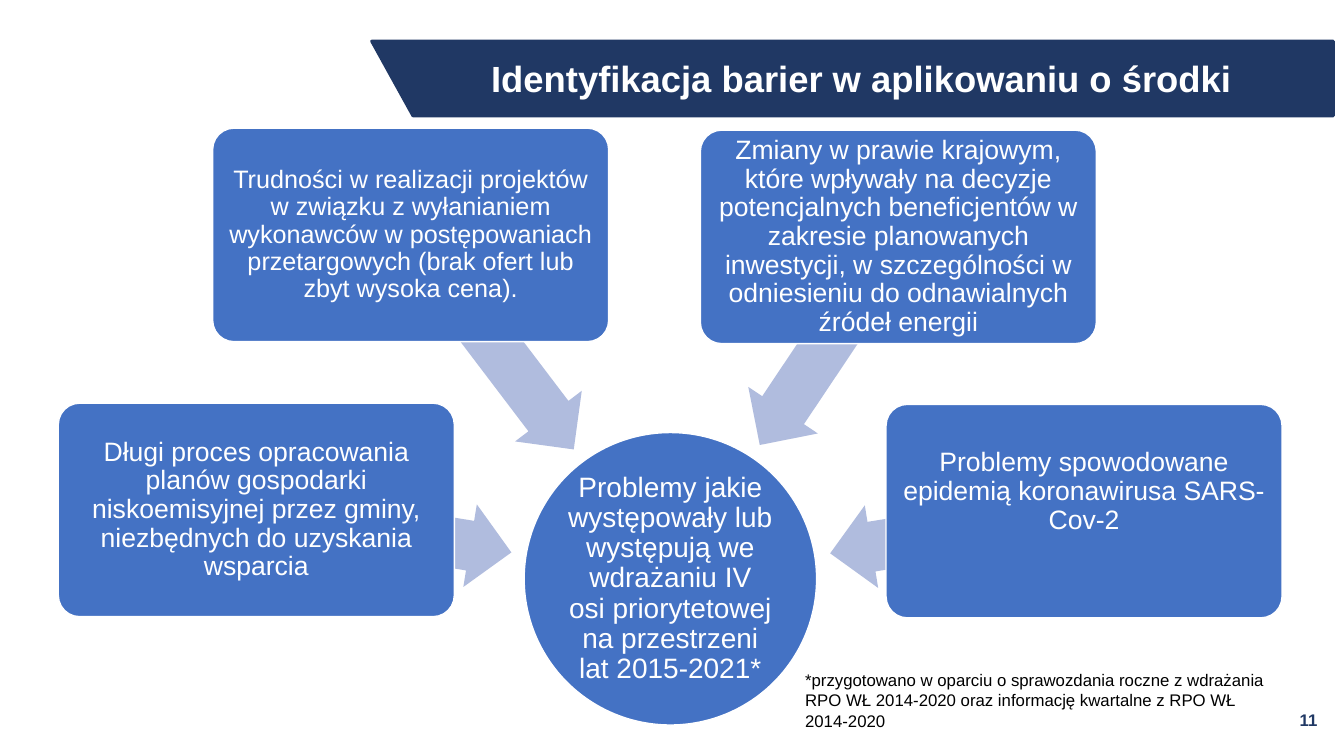
from dataclasses import dataclass

from pptx import Presentation
from pptx.dml.color import RGBColor
from pptx.enum.shapes import MSO_SHAPE
from pptx.enum.text import MSO_ANCHOR, PP_ALIGN
from pptx.util import Cm, Pt

NAVY, BLUE, PALE = "203864", "4472C4", "B0BCDE"
WHITE, BLACK = "FFFFFF", "000000"
BOX_W, BOX_H, ARROW_H = 9.98, 5.38, 2.11


@dataclass
class Arrow:
    left: float
    top: float
    width: float
    turn: float


@dataclass
class Barrier:
    left: float
    top: float
    text: str
    size: int
    arrow: Arrow
    foot: float = 0.11  # bottom inset


BARRIERS = [
    Barrier(1.47, 10.16, "Długi proces opracowania planów gospodarki niskoemisyjnej "
            "przez gminy, niezbędnych do uzyskania wsparcia", 19,
            Arrow(6.43, 12.34, 6.5, 189.3)),
    Barrier(5.36, 3.23, "Trudności w realizacji projektów w związku z wyłanianiem "
            "wykonawców w postępowaniach przetargowych (brak ofert lub zbyt "
            "wysoka cena).", 18, Arrow(9.02, 7.57, 6.78, 232.8)),
    Barrier(17.65, 3.28, "Zmiany w prawie krajowym, które wpływały na decyzje "
            "potencjalnych beneficjentów w zakresie planowanych inwestycji, w "
            "szczególności w odniesieniu do odnawialnych źródeł energii", 19,
            Arrow(17.75, 7.54, 6.3, 303.8)),
    Barrier(22.33, 10.19, "Problemy spowodowane epidemią koronawirusa SARS-Cov-2", 19,
            Arrow(20.88, 12.37, 6.5, 350.8), 1.08),
]


def color(code: str) -> RGBColor:
    return RGBColor.from_string(code)


def paint(shape, fill: str, line: str = "", width: float = 1) -> None:
    shape.shadow.inherit = False
    shape.fill.solid()
    shape.fill.fore_color.rgb = color(fill)
    if line:
        shape.line.color.rgb = color(line)
        shape.line.width = Pt(width)
    else:
        shape.line.fill.background()


def write(shape, text: str, size: int, ink: str, align=PP_ALIGN.CENTER,
          bold: bool = False, space: float = 1.0):
    frame = shape.text_frame
    frame.word_wrap = True
    para = frame.paragraphs[0]
    para.alignment = align
    para.line_spacing = space
    run = para.add_run()
    run.text = text
    run.font.name = "Arial"
    run.font.size = Pt(size)
    run.font.bold = bold
    run.font.color.rgb = color(ink)
    return frame


def draw_node(slide, kind, left: float, top: float, width: float, height: float,
              text: str, size: int, inset: float, foot: float):
    node = slide.shapes.add_shape(kind, Cm(left), Cm(top), Cm(width), Cm(height))
    paint(node, BLUE, WHITE)
    frame = write(node, text, size, WHITE, space=0.9)
    frame.vertical_anchor = MSO_ANCHOR.MIDDLE
    frame.margin_left = frame.margin_right = frame.margin_top = Cm(inset)
    frame.margin_bottom = Cm(foot)
    return node


def draw_arrow(slide, arrow: Arrow) -> None:
    shape = slide.shapes.add_shape(MSO_SHAPE.LEFT_ARROW, Cm(arrow.left), Cm(arrow.top),
                                   Cm(arrow.width), Cm(ARROW_H))
    shape.adjustments[0] = 0.6
    shape.adjustments[1] = 0.5
    shape.rotation = arrow.turn
    paint(shape, PALE)


def add_text(slide, left: float, top: float, width: float, height: float):
    return slide.shapes.add_textbox(Cm(left), Cm(top), Cm(width), Cm(height))


def main() -> None:
    deck = Presentation()
    deck.slide_width, deck.slide_height = Cm(33.87), Cm(19.05)
    slide = deck.slides.add_slide(deck.slide_layouts[6])

    # Title banner and page number
    form = slide.shapes.build_freeform(Cm(9.37), Cm(1.04))
    form.add_line_segments([(Cm(33.6), Cm(1.04)), (Cm(33.6), Cm(2.92)),
                            (Cm(10.41), Cm(2.92))], close=True)
    paint(form.convert_to_shape(), NAVY, NAVY, 2.25)
    page = write(add_text(slide, 25.83, 17.63, 7.62, 1.02), "11", 12, NAVY,
                 PP_ALIGN.RIGHT, True)
    page.vertical_anchor = MSO_ANCHOR.MIDDLE
    write(add_text(slide, 10.06, 1.3, 23.32, 1.37),
          "Identyfikacja barier w aplikowaniu o środki", 26, WHITE, bold=True)

    # Central question
    draw_node(slide, MSO_SHAPE.OVAL, 13.21, 10.9, 7.37, 7.37,
              "Problemy jakie występowały lub występują we wdrażaniu IV osi "
              "priorytetowej na przestrzeni lat 2015-2021*", 20, 0.03, 0.03)

    # Barriers, each over the tail of its arrow
    for item in BARRIERS:
        draw_arrow(slide, item.arrow)
        box = draw_node(slide, MSO_SHAPE.ROUNDED_RECTANGLE, item.left, item.top,
                        BOX_W, BOX_H, item.text, item.size, 0.11, item.foot)
        box.adjustments[0] = 0.1

    # Footnote
    write(add_text(slide, 20.04, 16.76, 12.29, 1.8),
          "*przygotowano w oparciu o sprawozdania roczne z wdrażania RPO WŁ "
          "2014-2020 oraz informację kwartalne z RPO WŁ 2014-2020", 12, BLACK,
          PP_ALIGN.LEFT)

    deck.save("out.pptx")


if __name__ == "__main__":
    main()
